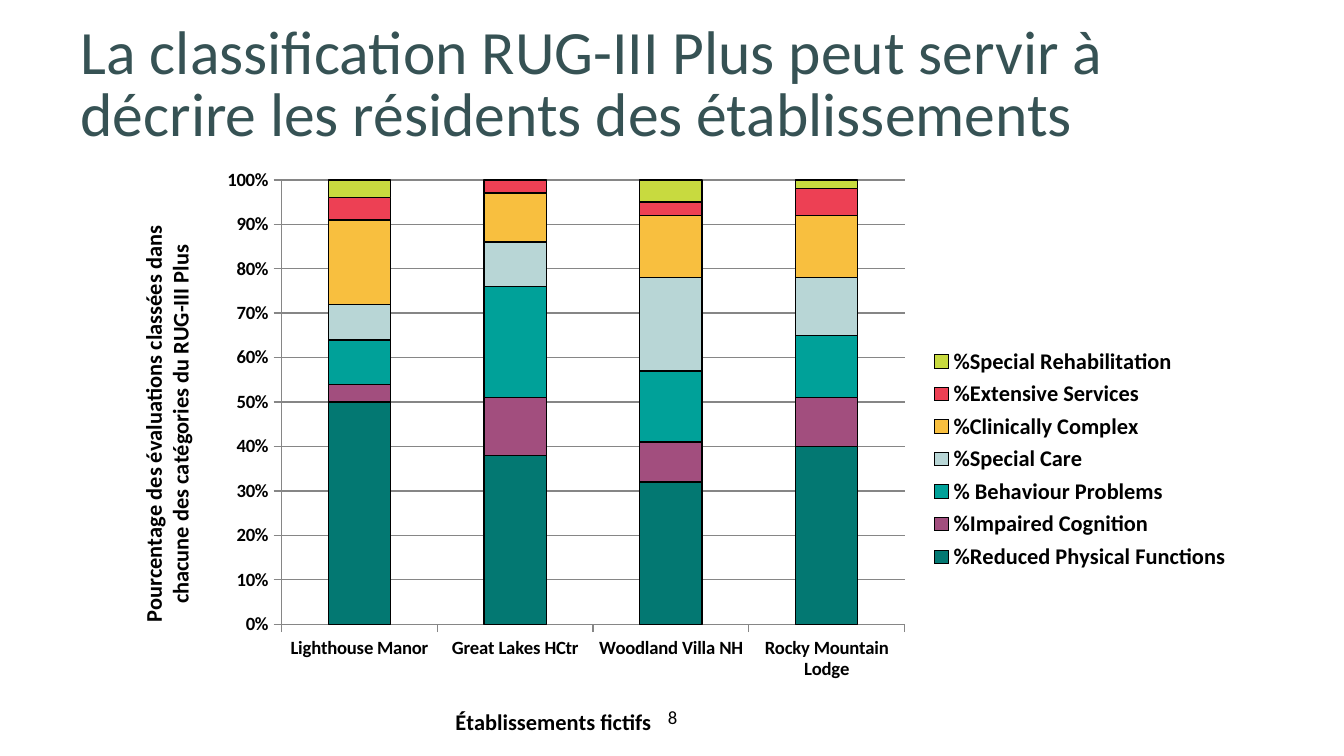
"""Build a slide with a stacked chart of RUG-III Plus categories by facility."""
from dataclasses import dataclass

from lxml import etree
from pptx import Presentation
from pptx import util as u
from pptx.chart.data import CategoryChartData
from pptx.dml.color import RGBColor
from pptx.enum import chart as charts, text
from pptx.oxml import ns


@dataclass(frozen=True)
class Theme:
    font: str = "Calibri"
    ink: str = "000000"
    heading: str = "365254"
    grid: str = "868686"
    title_size: int = 33
    label_size: int = 12
    small_size: int = 10


theme = Theme()


def write_text(frame, words, size, color=theme.ink, bold=False, align=None, spacing=None):
    para = frame.paragraphs[0]
    para.alignment = align
    para.line_spacing = spacing
    span = para.add_run()
    span.text = words
    span.font.name = theme.font
    span.font.size = u.Pt(size)
    span.font.bold = bold
    span.font.color.rgb = RGBColor.from_string(color)


def place(element, index, **fractions):
    for old in element.findall(ns.qn("c:layout")):
        element.remove(old)
    layout = etree.Element(ns.qn("c:layout"))
    manual = etree.SubElement(layout, ns.qn("c:manualLayout"))
    if index == 0:
        etree.SubElement(manual, ns.qn("c:layoutTarget"), val="inner")
    for mode in ("xMode", "yMode"):
        etree.SubElement(manual, ns.qn(f"c:{mode}"), val="edge")
    for name, value in fractions.items():
        etree.SubElement(manual, ns.qn(f"c:{name}"), val=str(value))
    element.insert(index, layout)


deck = Presentation()
deck.slide_width = u.Inches(10)
deck.slide_height = u.Inches(10 * 9 / 16)
page = deck.slides.add_slide(deck.slide_layouts[5])

title = page.shapes.title
title.left, title.top = u.Inches(0.5), u.Inches(0.14)
title.width, title.height = u.Inches(8.44), u.Inches(0.93)
title.text_frame.vertical_anchor = text.MSO_ANCHOR.TOP
title.text_frame.auto_size = text.MSO_AUTO_SIZE.NONE
write_text(
    title.text_frame,
    "La classification RUG-III Plus peut servir à décrire les résidents des établissements",
    size=theme.title_size, color=theme.heading, align=text.PP_ALIGN.LEFT,
    spacing=u.Pt(theme.title_size),
)

categories = ["Lighthouse Manor", "Great Lakes HCtr", "Woodland Villa NH", "Rocky Mountain Lodge"]
series_rows = [
    ("%Reduced Physical Functions", (50, 38, 32, 40), "037872"),
    ("%Impaired Cognition", (4, 13, 9, 11), "A24E7E"),
    ("% Behaviour Problems", (10, 25, 16, 14), "00A199"),
    ("%Special Care", (8, 10, 21, 13), "B8D6D6"),
    ("%Clinically Complex", (19, 11, 14, 14), "F8BF3F"),
    ("%Extensive Services", (5, 3, 3, 6), "ED4054"),
    ("%Special Rehabilitation", (4, 0, 5, 2), "C8DA3F"),
]
data = CategoryChartData()
data.categories = categories
for name, values, _ in series_rows:
    data.add_series(name, values)
chart = page.shapes.add_chart(
    charts.XL_CHART_TYPE.COLUMN_STACKED_100,
    u.Inches(0.83), u.Inches(1.16), u.Inches(8.43), u.Inches(4.47), data,
).chart
chart.has_title = False
chart.has_legend = True
chart.legend.position = charts.XL_LEGEND_POSITION.RIGHT
chart.legend.include_in_layout = False

plot = chart.plots[0]
plot.gap_width, plot.overlap = 150, 100
plot.vary_by_categories = False
for series, (_, _, color) in zip(plot.series, series_rows):
    series.format.fill.solid()
    series.format.fill.fore_color.rgb = RGBColor.from_string(color)
    series.format.line.color.rgb = RGBColor.from_string(theme.ink)
    series.format.line.width = u.Pt(0.75)

axis_titles = [
    (chart.category_axis, "Établissements fictifs"),
    (chart.value_axis,
     "Pourcentage des évaluations classées dans chacune des catégories du RUG-III Plus"),
]
for axis, words in axis_titles:
    write_text(axis.axis_title.text_frame, words, size=theme.label_size, bold=True)
    axis.major_tick_mark = charts.XL_TICK_MARK.OUTSIDE
    axis.minor_tick_mark = charts.XL_TICK_MARK.NONE
    axis.format.line.color.rgb = RGBColor.from_string(theme.grid)

value_axis = chart.value_axis
value_axis.minimum_scale, value_axis.maximum_scale, value_axis.major_unit = 0, 1, 0.1
value_axis.tick_labels.number_format = "0%"
value_axis.tick_labels.number_format_is_linked = False
value_axis.has_major_gridlines = True
value_axis.major_gridlines.format.line.color.rgb = RGBColor.from_string(theme.grid)

fonts = [
    (chart.font, theme.small_size, False),
    (chart.category_axis.tick_labels.font, theme.small_size, True),
    (value_axis.tick_labels.font, theme.small_size, True),
    (chart.legend.font, theme.label_size, True),
]
for font, size, bold in fonts:
    font.name, font.size, font.bold = theme.font, u.Pt(size), bold
    font.color.rgb = RGBColor.from_string(theme.ink)

root = chart.element
place(root.xpath(".//c:plotArea")[0], 0, x=0.15, y=0.04, w=0.55, h=0.74)
place(root.xpath(".//c:legend")[0], 1, x=0.72, y=0.31, w=0.27, h=0.39)
place(root.xpath(".//c:catAx/c:title")[0], 1, x=0.3, y=0.91)
place(root.xpath(".//c:valAx/c:title")[0], 1, x=0.02, y=0.11)
rotation = root.xpath(".//c:valAx/c:title//a:bodyPr")[0]
rotation.set("rot", "-5400000")
rotation.set("vert", "horz")

number = page.shapes.add_textbox(u.Inches(4.69), u.Inches(5.25), u.Inches(0.63), u.Inches(0.17))
frame = number.text_frame
frame.margin_left = frame.margin_top = frame.margin_right = frame.margin_bottom = 0
frame.word_wrap = True
frame.vertical_anchor = text.MSO_ANCHOR.MIDDLE
write_text(frame, "8", size=theme.small_size, align=text.PP_ALIGN.CENTER)

deck.save("out.pptx")
